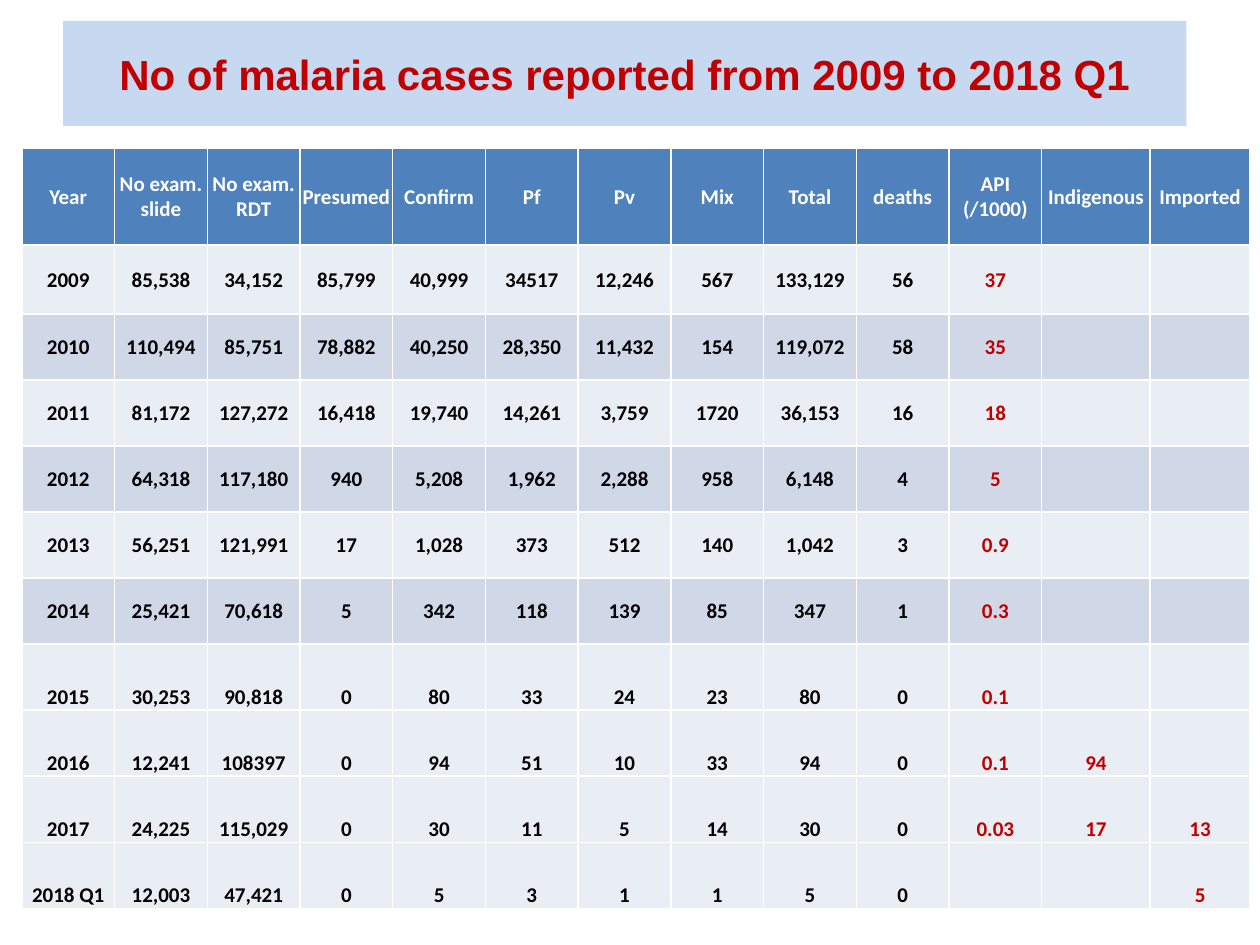
"""Build a slide tabulating yearly malaria cases from 2009 to 2018 Q1."""
from dataclasses import dataclass

from lxml.etree import SubElement
from pptx import Presentation
from pptx.dml.color import RGBColor
from pptx.enum.text import MSO_ANCHOR, PP_ALIGN
from pptx.oxml.ns import qn
from pptx.util import Pt


@dataclass(frozen=True)
class Theme:
    title_fill: str = "C6D9F1"
    header_fill: str = "4F81BD"
    light_row: str = "E9EDF4"
    dark_row: str = "D0D8E8"
    header_text: str = "FFFFFF"
    body_text: str = "000000"
    accent: str = "C00000"
    border: str = "FFFFFF"
    title_font: str = "Arial"
    table_font: str = "Calibri"
    title_size: int = 24
    table_size: int = 12


theme = Theme()


def style_text(frame, font_name, size, color):
    for paragraph in frame.paragraphs:
        paragraph.alignment = PP_ALIGN.CENTER
        for run in paragraph.runs:
            run.font.name = font_name
            run.font.size = Pt(size)
            run.font.bold = True
            run.font.color.rgb = RGBColor.from_string(color)


def draw_borders(cell):
    properties = cell._tc.get_or_add_tcPr()
    for side in ("a:lnL", "a:lnR", "a:lnT", "a:lnB"):
        line = SubElement(properties, qn(side), w=str(Pt(1)))
        fill = SubElement(line, qn("a:solidFill"))
        SubElement(fill, qn("a:srgbClr"), val=theme.border)


headings = ("Year", "No exam. slide", "No exam. RDT", "Presumed", "Confirm", "Pf", "Pv",
            "Mix", "Total", "deaths", "API (/1000)", "Indigenous", "Imported")
yearly_cases = [
    ("2009", "85,538", "34,152", "85,799", "40,999", "34517", "12,246", "567", "133,129", "56", "37", "", ""),
    ("2010", "110,494", "85,751", "78,882", "40,250", "28,350", "11,432", "154", "119,072", "58", "35", "", ""),
    ("2011", "81,172", "127,272", "16,418", "19,740", "14,261", "3,759", "1720", "36,153", "16", "18", "", ""),
    ("2012", "64,318", "117,180", "940", "5,208", "1,962", "2,288", "958", "6,148", "4", "5", "", ""),
    ("2013", "56,251", "121,991", "17", "1,028", "373", "512", "140", "1,042", "3", "0.9", "", ""),
    ("2014", "25,421", "70,618", "5", "342", "118", "139", "85", "347", "1", "0.3", "", ""),
    ("2015", "30,253", "90,818", "0", "80", "33", "24", "23", "80", "0", "0.1", "", ""),
    ("2016", "12,241", "108397", "0", "94", "51", "10", "33", "94", "0", "0.1", "94", ""),
    ("2017", "24,225", "115,029", "0", "30", "11", "5", "14", "30", "0", "0.03", "17", "13"),
    ("2018 Q1", "12,003", "47,421", "0", "5", "3", "1", "1", "5", "0", "", "", "5"),
]
column_widths = [53] * 11 + [62, 57]
row_heights = [55.5, 39.5] + [37.75] * 9
first_accent_column = headings.index("API (/1000)")
first_bottom_row = 7

presentation = Presentation()
presentation.slide_width, presentation.slide_height = Pt(720), Pt(540)
slide = presentation.slides.add_slide(presentation.slide_layouts[5])

title = slide.shapes.title
title.left, title.top, title.width, title.height = Pt(36), Pt(12), Pt(642), Pt(60)
title.fill.solid()
title.fill.fore_color.rgb = RGBColor.from_string(theme.title_fill)
title.text_frame.text = "No of malaria cases reported from 2009 to 2018 Q1"
title.text_frame.vertical_anchor = MSO_ANCHOR.MIDDLE
style_text(title.text_frame, theme.title_font, theme.title_size, theme.accent)

cases = slide.shapes.add_table(
    len(row_heights), len(headings), Pt(12.5), Pt(84.5),
    Pt(sum(column_widths)), Pt(sum(row_heights))).table
for column, width in zip(cases.columns, column_widths):
    column.width = Pt(width)
for row, height in zip(cases.rows, row_heights):
    row.height = Pt(height)

for row_index, values in enumerate([headings] + yearly_cases):
    at_bottom = row_index >= first_bottom_row
    if row_index == 0:
        row_fill = theme.header_fill
    elif row_index % 2 == 0 and not at_bottom:
        row_fill = theme.dark_row
    else:
        row_fill = theme.light_row
    for column_index, value in enumerate(values):
        if row_index == 0:
            text_color = theme.header_text
        elif column_index >= first_accent_column:
            text_color = theme.accent
        else:
            text_color = theme.body_text
        cell = cases.cell(row_index, column_index)
        cell.text_frame.text = value
        cell.margin_left = cell.margin_right = cell.margin_top = Pt(0.7)
        cell.margin_bottom = Pt(0)
        cell.vertical_anchor = MSO_ANCHOR.BOTTOM if at_bottom else MSO_ANCHOR.MIDDLE
        style_text(cell.text_frame, theme.table_font, theme.table_size, text_color)
        draw_borders(cell)
        cell.fill.solid()
        cell.fill.fore_color.rgb = RGBColor.from_string(row_fill)

presentation.save("out.pptx")
